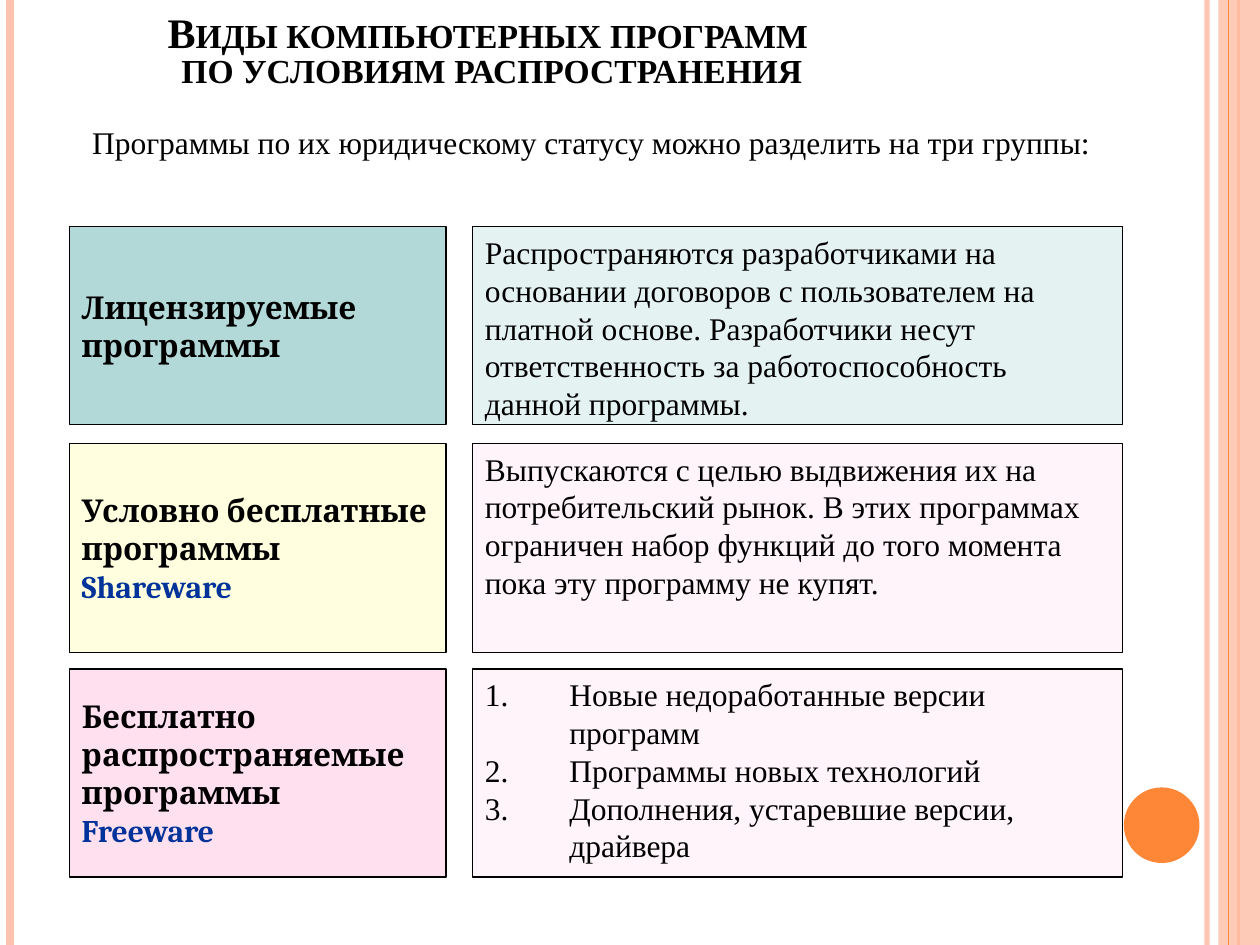
from dataclasses import dataclass
from typing import NamedTuple

from lxml.etree import SubElement
from pptx import Presentation
from pptx.dml.color import RGBColor as Rgb
from pptx.enum.shapes import MSO_CONNECTOR as Conn, MSO_SHAPE as Geo
from pptx.enum.text import MSO_ANCHOR as Anchor, PP_ALIGN as Align
from pptx.oxml.ns import qn
from pptx.util import Inches, Pt


@dataclass(frozen=True)
class Theme:
    black: str = "000000"
    blue: str = "003399"
    peach: str = "FEC3AE"
    orange: str = "FE8637"
    teal: str = "008080"
    yellow: str = "FFFF99"
    pink: str = "FF99CC"
    serif: str = "Times New Roman"
    label: str = "Cambria"
    head: int = 24
    body: int = 18
    edge: float = 0.75


class Box(NamedTuple):
    """Left, top, width and height in percent of the slide."""
    x: float
    y: float
    w: float
    h: float


class Col(NamedTuple):
    x: float
    w: float


class Rule(NamedTuple):
    x: float
    color: str
    width: float
    alpha: int = 100


class Group(NamedTuple):
    y: float
    h: float
    color: str
    tint: str
    name: list[str]
    term: str
    note: list[str]
    area: tuple[float, float]  # width and height of the note text


T = Theme()
WIDE, HIGH = Inches(10), Inches(7.5)
LEFT, RIGHT = Col(5.5, 29.9), Col(37.5, 51.6)
INDENT = Inches(0.67)

RULES = [
    Rule(95.8, T.peach, 3, 93),
    Rule(0.8, T.peach, 4.5),
    Rule(98.3, T.orange, 1.5),
]
INNER = Rule(97.5, T.orange, 0.75)

GROUPS = [
    Group(24, 20.93, T.teal, T.teal, ["Лицензируемые", "программы"], "",
          ["Распространяются разработчиками на основании договоров с "
           "пользователем на платной основе. Разработчики несут "
           "ответственность за работоспособность данной программы."],
          (51.6, 21.6)),
    Group(46.93, 22.1, T.yellow, T.pink,
          ["Условно бесплатные", "программы"], "Shareware",
          ["Выпускаются с целью выдвижения их на потребительский рынок. "
           "В этих программах ограничен набор функций до того момента "
           "пока эту программу не купят."],
          (50.8, 17.47)),
    Group(70.8, 22, T.pink, T.pink,
          ["Бесплатно", "распространяемые", "программы"], "Freeware",
          ["Новые недоработанные версии программ",
           "Программы новых технологий",
           "Дополнения, устаревшие версии, драйвера"],
          (50.8, 25.6)),
]


def place(box: Box) -> tuple[int, int, int, int]:
    return (int(WIDE * box.x / 100), int(HIGH * box.y / 100),
            int(WIDE * box.w / 100), int(HIGH * box.h / 100))


def fade(item, alpha: int) -> None:
    """Set the opacity of every solid colour in a shape's properties."""
    if alpha < 100:
        for clr in item._element.spPr.iter(qn("a:srgbClr")):
            SubElement(clr, qn("a:alpha")).set("val", str(alpha * 1000))


def rule(slide, line: Rule) -> None:
    x = int(WIDE * line.x / 100)
    item = slide.shapes.add_connector(Conn.STRAIGHT, x, 0, x, HIGH)
    item.line.color.rgb = Rgb.from_string(line.color)
    item.line.width = Pt(line.width)
    SubElement(item._element.spPr, qn("a:effectLst"))
    fade(item, line.alpha)


def block(slide, box: Box, color: str, alpha: int = 100,
          geo=Geo.RECTANGLE, edge: bool = False):
    item = slide.shapes.add_shape(geo, *place(box))
    item.shadow.inherit = False
    item.fill.solid()
    item.fill.fore_color.rgb = Rgb.from_string(color)
    fade(item, alpha)
    if edge:
        item.line.color.rgb = Rgb.from_string(T.black)
        item.line.width = Pt(T.edge)
    else:
        item.line.fill.background()
    return item


def write(frame, lines: list[str], face: str = T.serif, size: int = T.body,
          bold: bool = False, align=Align.LEFT) -> None:
    frame.text = "\n".join(lines)
    for para in frame.paragraphs:
        para.alignment = align
        for run in para.runs:
            font = run.font
            font.name, font.size, font.bold = face, Pt(size), bold
            font.color.rgb = Rgb.from_string(T.black)


def text(slide, box: Box, lines: list[str], **style):
    frame = slide.shapes.add_textbox(*place(box)).text_frame
    frame.word_wrap = True
    write(frame, lines, **style)
    return frame


def number(frame) -> None:
    for para in frame.paragraphs:
        props = para._p.get_or_add_pPr()
        props.set("marL", str(INDENT))
        props.set("indent", str(-INDENT))
        SubElement(props, qn("a:buAutoNum")).set("type", "arabicPeriod")


def title(slide) -> None:
    frame = text(slide, Box(0, 0, 78.1, 10.27),
                 ["Виды компьютерных программ \vпо условиям распространения"],
                 size=T.head, bold=True, align=Align.CENTER)
    frame.vertical_anchor = Anchor.BOTTOM
    para = frame.paragraphs[0]
    para.line_spacing = 0.7
    for run in para.runs:
        run._r.get_or_add_rPr().set("cap", "small")


def group(slide, row: Group) -> None:
    # Name of the group
    card = block(slide, Box(LEFT.x, row.y, LEFT.w, row.h), row.color, 30,
                 edge=True)
    frame = card.text_frame
    frame.word_wrap = False
    frame.vertical_anchor = Anchor.MIDDLE
    write(frame, row.name + [row.term] * bool(row.term), T.label, bold=True)
    if row.term:
        run = frame.paragraphs[-1].runs[0]
        run.font.color.rgb = Rgb.from_string(T.blue)
    # Its description
    block(slide, Box(RIGHT.x, row.y, RIGHT.w, row.h), row.tint, 10, edge=True)
    note = text(slide, Box(RIGHT.x, row.y, *row.area), row.note)
    if len(row.note) > 1:
        number(note)


def main() -> None:
    deck = Presentation()
    deck.slide_width, deck.slide_height = WIDE, HIGH
    slide = deck.slides.add_slide(deck.slide_layouts[6])

    # Side decoration
    for line in RULES:
        rule(slide, line)
    block(slide, Box(96.7, 0, 3.3, 100), T.peach, 87)
    rule(slide, INNER)
    block(slide, Box(89.2, 83.33, 6, 8), T.orange, geo=Geo.OVAL)

    # Heading and introduction
    title(slide)
    text(slide, Box(5.7, 12.4, 85.9, 5.33),
         [" Программы по их юридическому статусу можно разделить "
          "на три группы:"])

    # Three kinds of programs
    for row in GROUPS:
        group(slide, row)

    deck.save("out.pptx")


if __name__ == "__main__":
    main()
